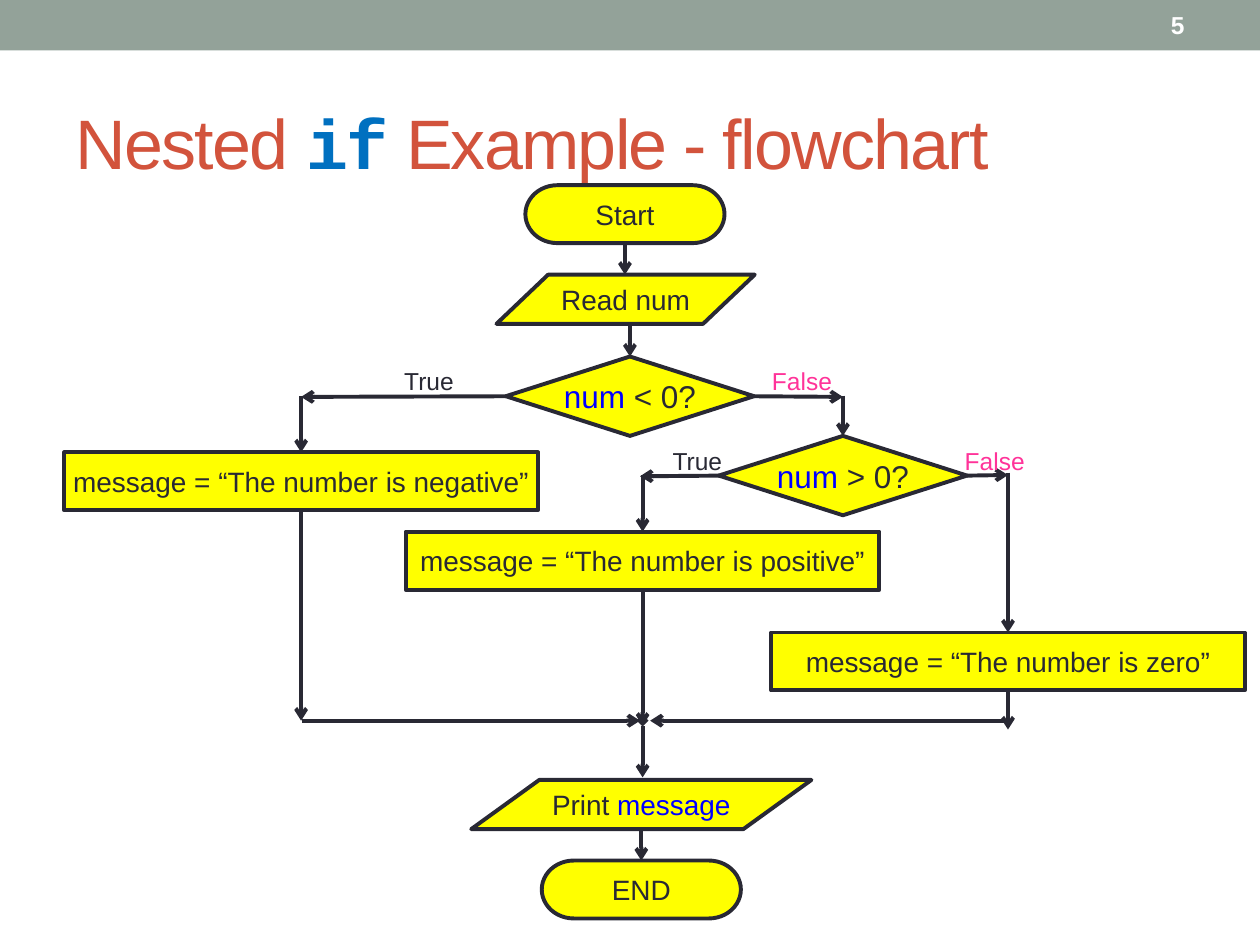
from pptx import Presentation
from pptx.dml.color import RGBColor
from pptx.enum.shapes import MSO_CONNECTOR, MSO_SHAPE as SHAPE
from pptx.enum.text import MSO_ANCHOR as ANCHOR, MSO_AUTO_SIZE as FIT, PP_ALIGN as ALIGN
from pptx.oxml.ns import qn
from pptx.util import Inches, Pt
from lxml.etree import SubElement

THEME = {
    "font": "Arial", "code_font": "Courier New",
    "title": 40, "decision": 18, "step": 16, "label": 14, "line": 2.25,
    "ink": "292934", "variable": "0000FF", "false": "FF3399", "fill": "FFFF00",
    "heading": "D2533C", "keyword": "0070C0", "bar": "93A299", "white": "FFFFFF",
}

# Node kinds: preset shape, width, height, type size
KINDS = {
    "terminal": (SHAPE.FLOWCHART_TERMINATOR, 1.58, 0.46, "step"),
    "read": (SHAPE.FLOWCHART_DATA, 2.05, 0.39, "step"),
    "print": (SHAPE.FLOWCHART_DATA, 2.7, 0.39, "step"),
    "decision": (SHAPE.FLOWCHART_DECISION, 1.97, 0.63, "decision"),
    "process": (SHAPE.FLOWCHART_PROCESS, 3.76, 0.46, "step"),
}

# Columns of the chart, and the level where the branches meet
NEG_X, POS_X, ZERO_X, MERGE_Y = 2.39, 5.1, 8, 5.72

# Nodes: name, kind, centre x, top, runs of (text, colour)
NODES = [
    ("start", "terminal", 4.96, 1.47, [("Start", "ink")]),
    ("read", "read", 4.965, 2.18, [("Read num", "ink")]),
    ("below", "decision", 5, 2.83, [("num", "variable"), (" < 0?", "ink")]),
    ("above", "decision", 6.69, 3.46, [("num ", "variable"), ("> 0?", "ink")]),
    ("negative", "process", NEG_X, 3.59, [("message = “The number is negative”", "ink")]),
    ("positive", "process", POS_X, 4.22, [("message = “The number is positive”", "ink")]),
    ("zero", "process", ZERO_X, 5.02, [("message = “The number is zero”", "ink")]),
    ("print", "print", 5.09, 6.19, [("Print ", "ink"), ("message", "variable")]),
    ("end", "terminal", 5.09, 6.83, [("END", "ink")]),
]

# Arrows: each end is a point or a (node, side) joint
TOP, LEFT, BOTTOM, RIGHT = range(4)
ARROWS = [
    (("start", BOTTOM), (4.96, 2.18)),
    ((5, 2.57), ("below", TOP)),
    (("below", LEFT), (NEG_X, 3.15)),
    ((NEG_X, 3.14), ("negative", TOP)),
    (("below", RIGHT), (6.69, 3.15)),
    ((6.69, 3.14), ("above", TOP)),
    (("above", LEFT), (5.08, 3.78)),
    ((POS_X, 3.77), ("positive", TOP)),
    (("above", RIGHT), (ZERO_X, 3.77)),
    ((ZERO_X, 3.75), ("zero", TOP)),
    (("negative", BOTTOM), (NEG_X, MERGE_Y)),
    (("positive", BOTTOM), (POS_X, 5.76)),
    (("zero", BOTTOM), (ZERO_X, 5.79)),
    ((2.4, MERGE_Y), (5.08, MERGE_Y)),
    ((ZERO_X, MERGE_Y), (5.16, MERGE_Y)),
    ((5.09, 6.58), ("end", TOP)),
]
MERGE_ARROW = ((POS_X, MERGE_Y), (POS_X, 6.17))

# Branch labels: text, colour, left, top
LABELS = [
    ("True", "ink", 3.03, 2.86), ("False", "false", 5.99, 2.86),
    ("True", "ink", 5.16, 3.49), ("False", "false", 7.52, 3.49),
]
TITLE = [("Nested ", "heading"), ("if", "keyword"), (" Example - flowchart", "heading")]


def color(name):
    return RGBColor.from_string(THEME[name])


def write(tf, runs, size, align, bold=None):
    p = tf.paragraphs[0]
    p.alignment = align
    for text, tint in runs:
        r = p.add_run()
        r.text = text
        r.font.name = THEME["font"]
        r.font.size = Pt(THEME[size])
        r.font.bold = bold
        r.font.color.rgb = color(tint)
    return p.runs


def add_text(slide, box, runs, size, align, bold=None):
    tf = slide.shapes.add_textbox(*map(Inches, box)).text_frame
    tf.word_wrap = True
    write(tf, runs, size, align, bold)
    return tf


def add_node(slide, kind, center, top, runs):
    preset, w, h, size = KINDS[kind]
    s = slide.shapes.add_shape(preset, *map(Inches, (center - w / 2, top, w, h)))
    s.shadow.inherit = False
    s.fill.solid()
    s.fill.fore_color.rgb = color("fill")
    s.line.color.rgb = color("ink")
    s.line.width = Pt(THEME["line"])
    tf = s.text_frame
    tf.word_wrap = False
    tf.vertical_anchor = ANCHOR.MIDDLE
    write(tf, runs, size, ALIGN.CENTER)
    return s


def add_arrow(slide, nodes, start, end, head=None):
    points = [(0, 0) if e[0] in nodes else e for e in (start, end)]
    c = slide.shapes.add_connector(
        MSO_CONNECTOR.STRAIGHT, *[Inches(v) for point in points for v in point])
    for e, join in ((start, c.begin_connect), (end, c.end_connect)):
        if e[0] in nodes:
            join(nodes[e[0]], e[1])
    c.line.color.rgb = color("ink")
    c.line.width = Pt(THEME["line"])
    ln = c.line._get_or_add_ln()
    if head:
        SubElement(ln, qn("a:headEnd"), type=head)
    SubElement(ln, qn("a:tailEnd"), type="arrow")
    SubElement(c._element.spPr, qn("a:effectLst"))


def main():
    prs = Presentation()
    prs.slide_width, prs.slide_height = Inches(10), Inches(7.5)
    slide = prs.slides.add_slide(prs.slide_layouts[5])

    # Top bar and slide number
    bar = slide.shapes.add_shape(SHAPE.RECTANGLE, 0, 0, prs.slide_width, Inches(0.4))
    bar.shadow.inherit = False
    bar.fill.solid()
    bar.fill.fore_color.rgb = color("bar")
    bar.line.fill.background()
    tf = add_text(slide, (8.33, 0.02, 1.17, 0.36), [("5", "white")], "label", ALIGN.RIGHT, True)
    tf.vertical_anchor = ANCHOR.MIDDLE

    # Title with the keyword in code type
    title = slide.shapes.title
    title.left, title.top, title.width, title.height = map(Inches, (0.5, 0.58, 9, 1.08))
    tf = title.text_frame
    tf.auto_size = FIT.NONE
    tf.vertical_anchor = ANCHOR.MIDDLE
    runs = write(tf, TITLE, "title", ALIGN.LEFT)
    for r in runs:
        r.font._element.set("spc", "-100")
    runs[1].font.name = THEME["code_font"]
    runs[1].font.bold = True

    # Flowchart
    nodes = {name: add_node(slide, *rest) for name, *rest in NODES}
    for start, end in ARROWS:
        add_arrow(slide, nodes, start, end)
    add_arrow(slide, nodes, *MERGE_ARROW, head="diamond")

    # Branch labels
    for text, tint, x, y in LABELS:
        tf = add_text(slide, (x, y, 0.75, 0.34), [(text, tint)], "label", ALIGN.CENTER)
        tf.auto_size = FIT.SHAPE_TO_FIT_TEXT

    prs.save("out.pptx")


if __name__ == "__main__":
    main()
